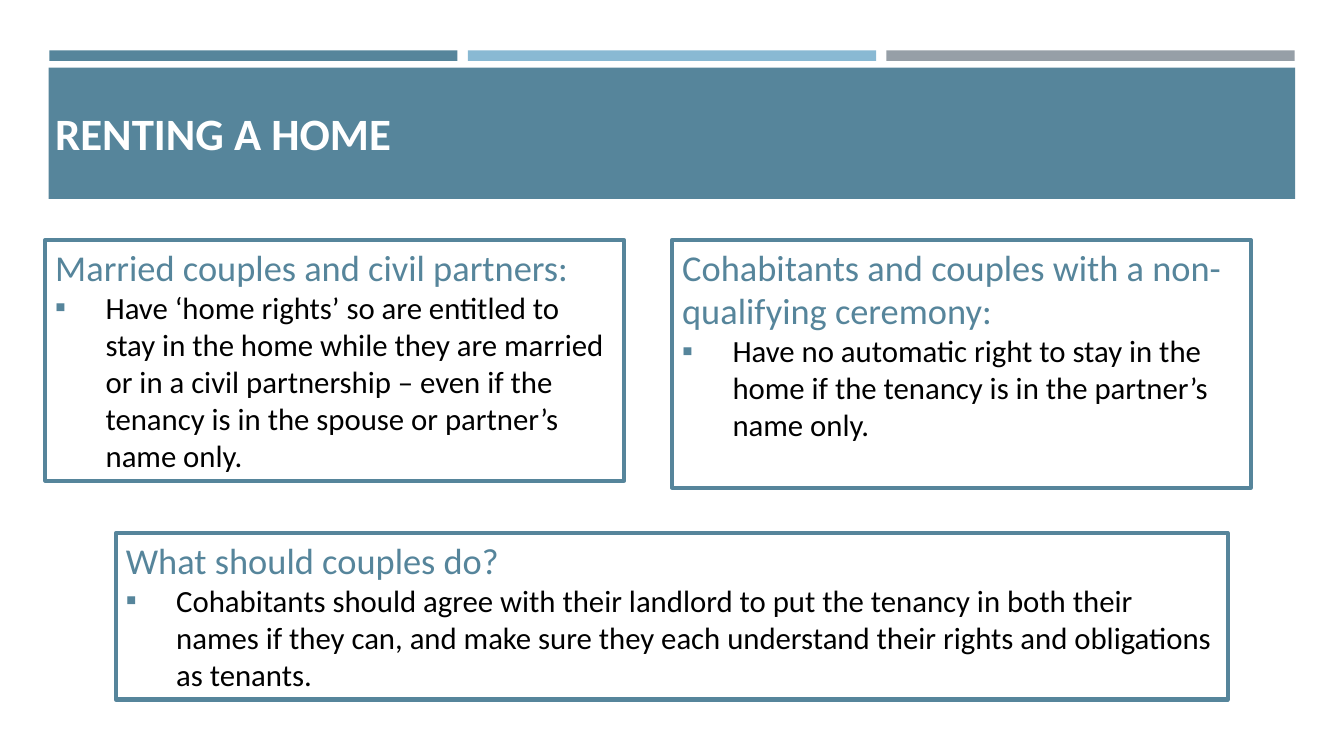
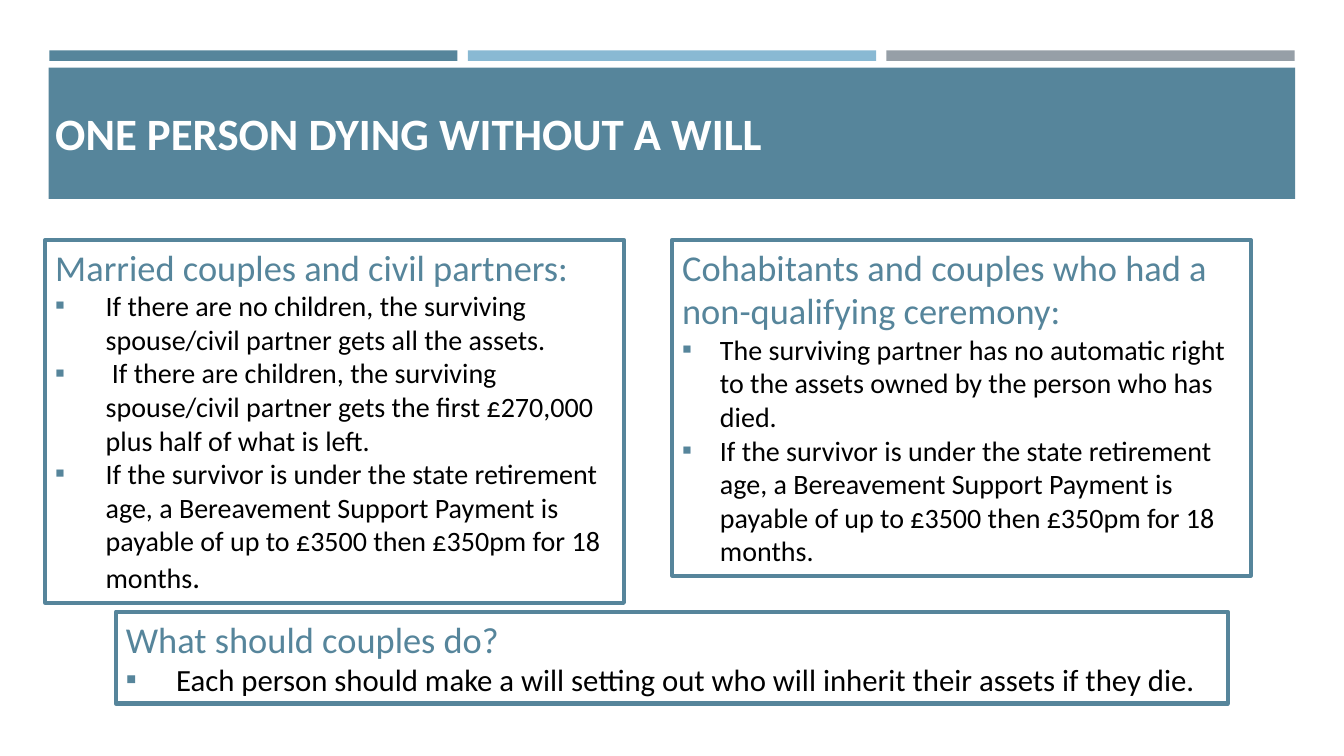
from lxml.etree import SubElement
from pptx import Presentation
from pptx.dml.color import RGBColor
from pptx.enum.shapes import MSO_SHAPE
from pptx.enum.text import MSO_ANCHOR, MSO_AUTO_SIZE, PP_ALIGN
from pptx.oxml.ns import qn
from pptx.util import Pt

TEAL = RGBColor(0x56, 0x85, 0x9B)
SKY = RGBColor(0x89, 0xB9, 0xD3)
GREY = RGBColor(0x96, 0x9F, 0xA7)
WHITE = RGBColor(0xFF, 0xFF, 0xFF)
BLACK = RGBColor(0x00, 0x00, 0x00)

FONT = "Calibri"
TITLE_SIZE, HEADING_SIZE, BODY_SIZE, SMALL_SIZE = 32, 26, 22, 20

BAR_LEFT, BAR_TOP, BAR_W, BAR_H, BAR_GAP = 35.2, 36, 291.6, 7.5, 7.4
CARD_TOP, CARD_W = 171.4, 413.3
LEFT_X, RIGHT_X = 32.4, 480.2
ADVICE_X, ADVICE_W = 82.8, 794.2


class Deck:
    def __init__(self):
        self.prs = Presentation()
        self.prs.slide_width, self.prs.slide_height = Pt(960), Pt(540)
        self.s = None

    def slide(self, title):
        self.s = self.prs.slides.add_slide(self.prs.slide_layouts[6])
        for i, color in enumerate((TEAL, SKY, GREY)):
            self.rect(BAR_LEFT + i * (BAR_W + BAR_GAP), BAR_TOP, BAR_W, BAR_H, color)
        self.rect(34.8, 48.4, 890.4, 93.7, TEAL)
        self.title(title)

    def rect(self, x, y, w, h, fill=None):
        """Draw a filled rectangle, or an outlined one when no fill is given."""
        sp = self.s.shapes.add_shape(MSO_SHAPE.RECTANGLE, Pt(x), Pt(y), Pt(w), Pt(h))
        sp.shadow.inherit = False
        if fill is None:
            sp.fill.background()
            sp.line.color.rgb = TEAL
            sp.line.width = Pt(3)
        else:
            sp.fill.solid()
            sp.fill.fore_color.rgb = fill
            sp.line.fill.background()
        return sp

    def style(self, r, size, color, bold=False):
        r.font.name = FONT
        r.font.size = Pt(size)
        r.font.color.rgb = color
        r.font.bold = bold

    def title(self, text):
        sp = self.s.shapes.add_textbox(Pt(32.4), Pt(49.7), Pt(895.7), Pt(90))
        tf = sp.text_frame
        tf.word_wrap = True
        tf.vertical_anchor = MSO_ANCHOR.MIDDLE
        tf.text = text
        self.style(tf.paragraphs[0].runs[0], TITLE_SIZE, WHITE, bold=True)

    def bullet(self, p, indent):
        pPr = p._p.get_or_add_pPr()
        pPr.set("marL", str(Pt(indent)))
        pPr.set("indent", str(-Pt(indent)))
        clr = SubElement(pPr, qn("a:buClr"))
        SubElement(clr, qn("a:srgbClr"), val=str(TEAL))
        SubElement(pPr, qn("a:buFont"), typeface=FONT)
        SubElement(pPr, qn("a:buChar"), char="▪")

    def card(self, x, y, w, h, heading, points, size=BODY_SIZE, indent=36):
        """Draw an outlined box with a heading and bullets; return its text frame."""
        tf = self.rect(x, y, w, h).text_frame
        tf.word_wrap = True
        tf.auto_size = MSO_AUTO_SIZE.SHAPE_TO_FIT_TEXT
        tf.vertical_anchor = MSO_ANCHOR.TOP
        tf.text = heading
        tf.paragraphs[0].alignment = PP_ALIGN.LEFT
        self.style(tf.paragraphs[0].runs[0], HEADING_SIZE, TEAL)
        for point in points:
            p = tf.add_paragraph()
            p.text = point
            p.alignment = PP_ALIGN.LEFT
            self.bullet(p, indent)
            self.style(p.runs[0], size, BLACK)
        return tf

    def married(self, h, points, size=BODY_SIZE):
        return self.card(LEFT_X, CARD_TOP, CARD_W, h,
                         "Married couples and civil partners:", points, size)

    def cohabitants(self, h, heading, points, size=BODY_SIZE, indent=36):
        return self.card(RIGHT_X, CARD_TOP, CARD_W, h, heading, points, size, indent)

    def advice(self, y, h, point):
        return self.card(ADVICE_X, y, ADVICE_W, h, "What should couples do?", [point])


def renting(deck):
    deck.slide("RENTING A HOME")
    deck.married(172, [
        "Have ‘home rights’ so are entitled to stay in the home while they are married "
        "or in a civil partnership – even if the tenancy is in the spouse or partner’s "
        "name only."])
    deck.cohabitants(177, "Cohabitants and couples with a non-qualifying ceremony:", [
        "Have no automatic right to stay in the home if the tenancy is in the partner’s "
        "name only."])
    deck.advice(380.9, 118.8,
                "Cohabitants should agree with their landlord to put the tenancy in both "
                "their names if they can, and make sure they each understand their rights "
                "and obligations as tenants.")


def dying_without_a_will(deck):
    support = ("If the survivor is under the state retirement age, a Bereavement Support "
               "Payment is payable of up to £3500 then £350pm for 18 months")
    deck.slide("ONE PERSON DYING WITHOUT A WILL")
    tf = deck.married(259.2, [
        "If there are no children, the surviving spouse/civil partner gets all the assets.",
        " If there are children, the surviving spouse/civil partner gets the first "
        "£270,000 plus half of what is left.",
        support], SMALL_SIZE)
    r = tf.paragraphs[-1].add_run()
    r.text = "."
    deck.style(r, BODY_SIZE, BLACK)
    deck.cohabitants(239.8, "Cohabitants and couples who had a non-qualifying ceremony:", [
        "The surviving partner has no automatic right to the assets owned by the person "
        "who has died.",
        support + "."], SMALL_SIZE, indent=27)
    deck.advice(437, 65.5,
                "Each person should make a will setting out who will inherit their assets "
                "if they die.")


def main():
    deck = Deck()
    renting(deck)
    dying_without_a_will(deck)
    deck.prs.save("out.pptx")


if __name__ == "__main__":
    main()
